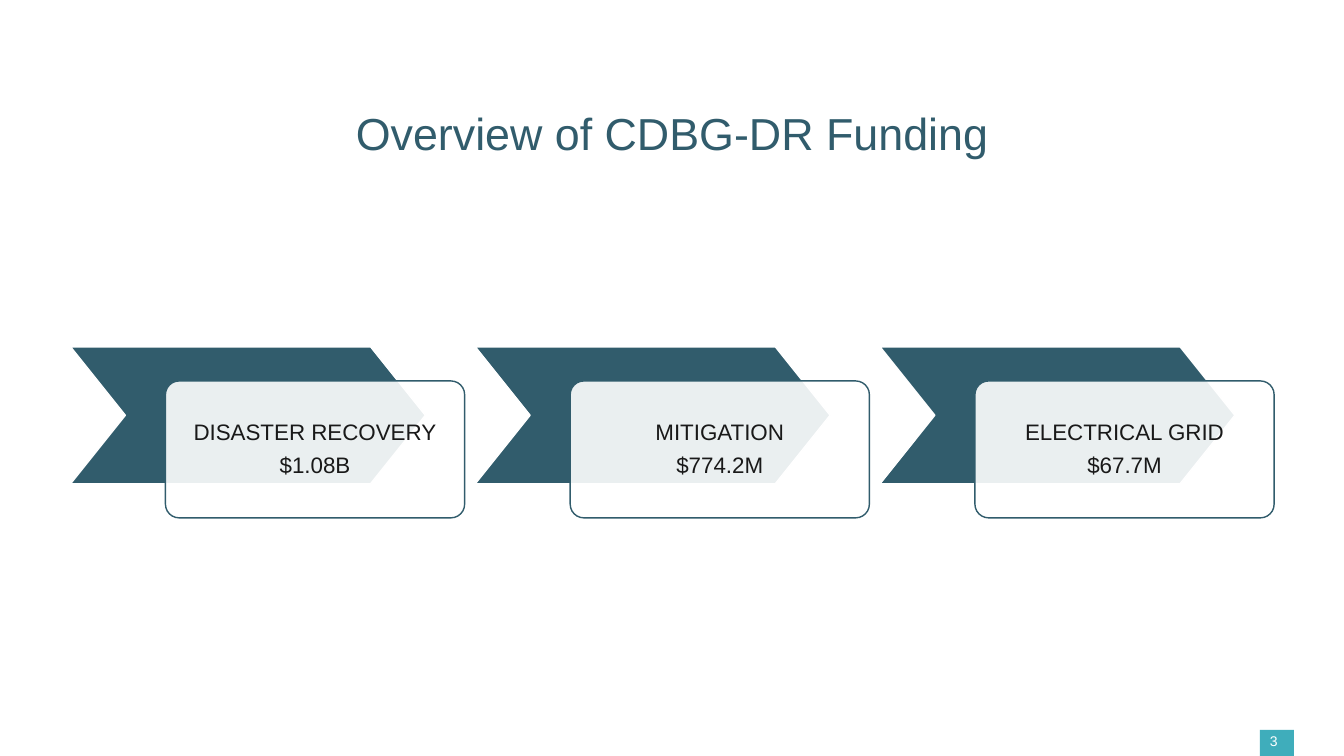
import dataclasses

import lxml.etree
import pptx
import pptx.dml.color
import pptx.enum.shapes
import pptx.enum.text
import pptx.oxml.ns
import pptx.shapes.autoshape
import pptx.slide
import pptx.text.text
import pptx.util

Cm = pptx.util.Cm
Pt = pptx.util.Pt
Shape = pptx.shapes.autoshape.Shape
Slide = pptx.slide.Slide
ShapeType = pptx.enum.shapes.MSO_SHAPE
Alignment = pptx.enum.text.PP_ALIGN
Anchor = pptx.enum.text.MSO_ANCHOR


@dataclasses.dataclass(frozen=True)
class Theme:
    font: str = "Arial"
    teal: str = "315C6C"
    accent: str = "3FADBB"
    white: str = "FFFFFF"
    ink: str = "191919"
    title_size: float = 32
    card_size: float = 16
    number_size: float = 10


@dataclasses.dataclass(frozen=True)
class Box:
    left: float
    top: float
    width: float
    height: float

    def shifted(self, distance: float) -> "Box":
        return dataclasses.replace(self, left=self.left + distance)

    def lengths(self) -> tuple[pptx.util.Length, ...]:
        return Cm(self.left), Cm(self.top), Cm(self.width), Cm(self.height)


@dataclasses.dataclass(frozen=True)
class Funding:
    program: str
    amount: str


THEME = Theme()
FUNDINGS = (
    Funding("DISASTER RECOVERY", "$1.08B"),
    Funding("MITIGATION", "$774.2M"),
    Funding("ELECTRICAL GRID", "$67.7M"),
)
TITLE = Box(1.78, 2.64, 30.33, 1.55)
CHEVRON = Box(1.78, 8.74, 8.94, 3.45)
CARD = Box(4.17, 9.6, 7.54, 3.45)
FUNDING_STEP = 10.2
BADGE = Box(31.75, 18.39, 0.86, 0.66)
NUMBER = Box(31.75, 18.39, 1.07, 0.86)


def color(value: str) -> pptx.dml.color.RGBColor:
    return pptx.dml.color.RGBColor.from_string(value)


def add_panel(slide: Slide, kind: ShapeType, box: Box, fill: str, line: str | None = None) -> Shape:
    shape = slide.shapes.add_shape(kind, *box.lengths())
    shape.shadow.inherit = False
    shape.fill.solid()
    shape.fill.fore_color.rgb = color(fill)
    if line is None:
        shape.line.fill.background()
    else:
        shape.line.color.rgb = color(line)
        shape.line.width = Pt(1)
    return shape


def set_opacity(shape: Shape, percent: int) -> None:
    fill = shape.element.spPr.find(pptx.oxml.ns.qn("a:solidFill"))
    alpha = lxml.etree.SubElement(fill[0], pptx.oxml.ns.qn("a:alpha"))
    alpha.set("val", str(percent * 1000))


def write_text(
    frame: pptx.text.text.TextFrame,
    text: str,
    size: float,
    ink: str,
    alignment: Alignment = Alignment.CENTER,
    anchor: Anchor = Anchor.MIDDLE,
    space_after: float = 0,
) -> None:
    frame.text = text
    frame.word_wrap = True
    frame.vertical_anchor = anchor
    for paragraph in frame.paragraphs:
        paragraph.alignment = alignment
        paragraph.line_spacing = 0.9
        paragraph.space_after = Pt(space_after)
        for run in paragraph.runs:
            run.font.name = THEME.font
            run.font.size = Pt(size)
            run.font.color.rgb = color(ink)


def add_funding(slide: Slide, funding: Funding, distance: float) -> None:
    chevron = add_panel(slide, ShapeType.CHEVRON, CHEVRON.shifted(distance), THEME.teal, THEME.white)
    chevron.adjustments[0] = 0.4
    card = add_panel(slide, ShapeType.ROUNDED_RECTANGLE, CARD.shifted(distance), THEME.white, THEME.teal)
    card.adjustments[0] = 0.1
    set_opacity(card, 90)
    frame = card.text_frame
    frame.margin_left = frame.margin_right = Cm(0.3)
    frame.margin_top = frame.margin_bottom = Cm(0.3)
    write_text(frame, f"{funding.program}\n{funding.amount}", THEME.card_size, THEME.ink, space_after=6.3)


def main() -> None:
    presentation = pptx.Presentation()
    presentation.slide_width = Cm(33.87)
    presentation.slide_height = Cm(19.05)
    slide = presentation.slides.add_slide(presentation.slide_layouts[6])

    add_panel(slide, ShapeType.RECTANGLE, BADGE, THEME.accent)
    for index, funding in enumerate(FUNDINGS):
        add_funding(slide, funding, index * FUNDING_STEP)

    title = slide.shapes.add_textbox(*TITLE.lengths())
    write_text(title.text_frame, "Overview of CDBG-DR Funding", THEME.title_size, THEME.teal)
    number = slide.shapes.add_textbox(*NUMBER.lengths())
    write_text(number.text_frame, "3", THEME.number_size, THEME.white, Alignment.LEFT, Anchor.TOP)

    presentation.save("out.pptx")


if __name__ == "__main__":
    main()
